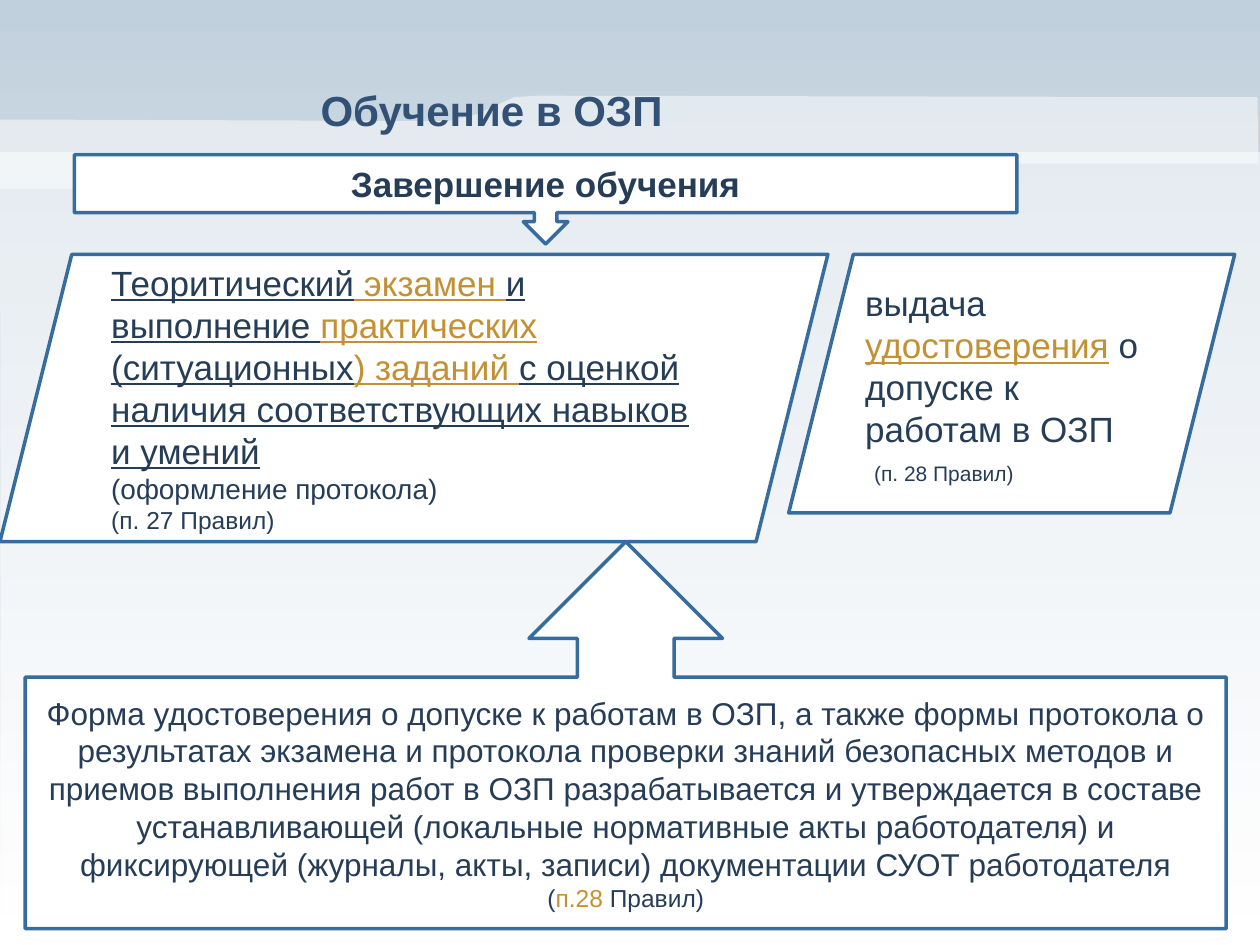
import dataclasses

import lxml.etree
import pptx
import pptx.dml.color
import pptx.enum.shapes
import pptx.enum.text
import pptx.oxml.ns
import pptx.util

Cm = pptx.util.Cm
Kind = pptx.enum.shapes.MSO_SHAPE
Align = pptx.enum.text.PP_ALIGN


@dataclasses.dataclass(frozen=True)
class Theme:
    font: str = "Arial"
    sky: str = "C1D0DD"
    white: str = "FFFFFF"
    edge: str = "376D9E"
    title: str = "335175"
    ink: str = "263D58"
    gold: str = "C39033"
    head: int = 24
    large: int = 20
    body: int = 18
    note: int = 16
    small: int = 14
    tiny: int = 12
    line: int = 2


@dataclasses.dataclass
class Para:
    words: list
    size: int
    align: Align = Align.LEFT
    indent: float = 0
    before: int = 0


@dataclasses.dataclass
class Word:
    text: str
    color: str
    bold: bool = False
    under: bool = False


THEME = Theme()


def ink(text, **style):
    return Word(text, THEME.ink, **style)


def gold(text, **style):
    return Word(text, THEME.gold, **style)


def color(code):
    return pptx.dml.color.RGBColor.from_string(code)


def paint(slide):
    fill = slide.background.fill
    fill.gradient()
    fill.gradient_angle = 270
    for stop, code in zip(fill.gradient_stops, (THEME.sky, THEME.white)):
        stop.color.rgb = color(code)


def add_veil(slide, points):
    spots = [(Cm(x), Cm(y)) for x, y in points]
    shape = slide.shapes.build_freeform(*spots[0])
    shape.add_line_segments(spots[1:], close=True)
    veil = shape.convert_to_shape()
    veil.shadow.inherit = False
    veil.line.fill.background()
    veil.fill.solid()
    veil.fill.fore_color.rgb = color(THEME.white)
    tint = veil._element.spPr.find(".//" + pptx.oxml.ns.qn("a:srgbClr"))
    lxml.etree.SubElement(tint, pptx.oxml.ns.qn("a:alpha"), val="50000")


def write(shape, paras):
    frame = shape.text_frame
    frame.word_wrap = True
    frame.vertical_anchor = pptx.enum.text.MSO_ANCHOR.MIDDLE
    for i, para in enumerate(paras):
        line = frame.add_paragraph() if i else frame.paragraphs[0]
        line.alignment = para.align
        if para.before:
            line.space_before = pptx.util.Pt(para.before)
        if para.indent:
            line._p.get_or_add_pPr().set("marL", str(Cm(para.indent)))
        for word in para.words:
            run = line.add_run()
            run.text = word.text
            run.font.name = THEME.font
            run.font.size = pptx.util.Pt(para.size)
            run.font.color.rgb = color(word.color)
            run.font.bold = word.bold
            run.font.underline = word.under


def add_title(slide, box, text):
    title = slide.shapes.add_textbox(*map(Cm, box))
    word = Word(text, THEME.title, bold=True)
    write(title, [Para([word], THEME.head, Align.CENTER)])


def add_block(slide, kind, box, paras):
    block = slide.shapes.add_shape(kind, *map(Cm, box))
    block.shadow.inherit = False
    block.fill.solid()
    block.fill.fore_color.rgb = color(THEME.white)
    block.line.color.rgb = color(THEME.edge)
    block.line.width = pptx.util.Pt(THEME.line)
    write(block, paras)


def main():
    deck = pptx.Presentation()
    deck.slide_width, deck.slide_height = Cm(25.4), Cm(19.05)
    slide = deck.slides.add_slide(deck.slide_layouts[6])
    paint(slide)
    add_veil(slide, [(0, 3.07), (25.4, 3.07), (25.48, 19.05), (0.03, 19.02)])
    add_veil(slide, [
        (25.35, 1.96), (10.82, 1.93), (10.36, 1.96), (9.6, 2.31),
        (9.04, 2.44), (0, 2.41), (0, 3.81), (15.9, 3.81),
        (16.21, 3.73), (17.12, 3.33), (17.58, 3.3), (25.37, 3.3),
    ])
    add_title(slide, (0.51, 1.52, 18.8, 1.4), "Обучение в ОЗП")
    add_block(slide, Kind.DOWN_ARROW_CALLOUT, (1.5, 3.12, 19, 1.8), [
        Para([ink("Завершение обучения", bold=True)], THEME.large, Align.CENTER),
    ])
    add_block(slide, Kind.PARALLELOGRAM, (0, 5.13, 16.69, 5.79), [
        Para([
            ink("Теоритический", under=True),
            gold(" экзамен ", under=True),
            ink("и выполнение ", under=True),
            gold("практических", under=True),
            ink(" (ситуационных", under=True),
            gold(") заданий ", under=True),
            ink("с оценкой наличия соответствующих навыков и умений", under=True),
        ], THEME.large),
        Para([ink("(оформление протокола)")], THEME.note),
        Para([ink("(п. 27 Правил)")], THEME.small),
    ])
    add_block(slide, Kind.PARALLELOGRAM, (15.9, 5.13, 8.99, 5.21), [
        Para([
            ink("выдача "),
            gold("удостоверения", under=True),
            ink(" о допуске к работам в ОЗП"),
        ], THEME.large),
        Para([ink("(п. 28 Правил)")], THEME.tiny, indent=0.18, before=6),
    ])
    add_block(slide, Kind.UP_ARROW_CALLOUT, (0.51, 10.92, 24.21, 7.8), [
        Para([ink(
            "Форма удостоверения о допуске к работам в ОЗП, а также формы "
            "протокола о результатах экзамена и протокола проверки знаний "
            "безопасных методов и приемов выполнения работ в ОЗП "
            "разрабатывается и утверждается в составе устанавливающей "
            "(локальные нормативные акты работодателя) и фиксирующей "
            "(журналы, акты, записи) документации СУОТ работодателя"
        )], THEME.body, Align.CENTER),
        Para([ink("("), gold("п.28"), ink(" Правил)")], THEME.small, Align.CENTER),
    ])
    deck.save("out.pptx")


if __name__ == "__main__":
    main()
